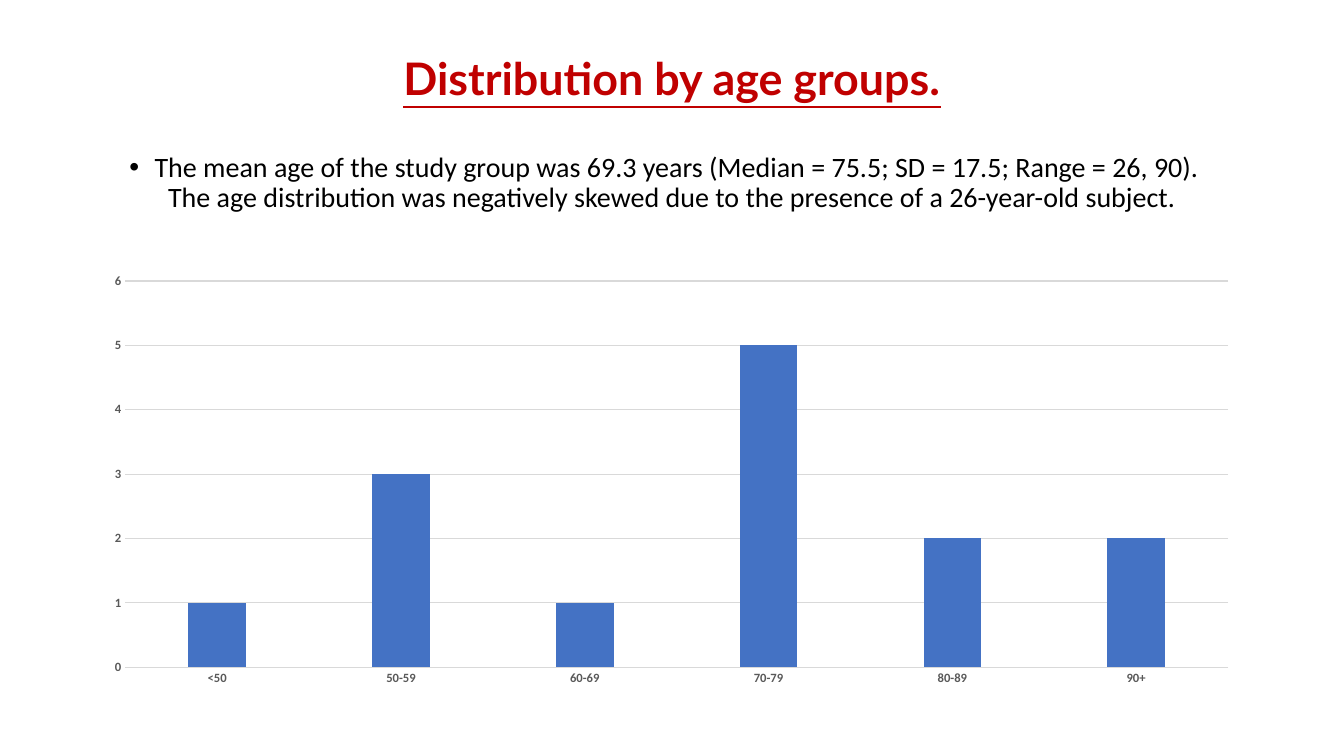
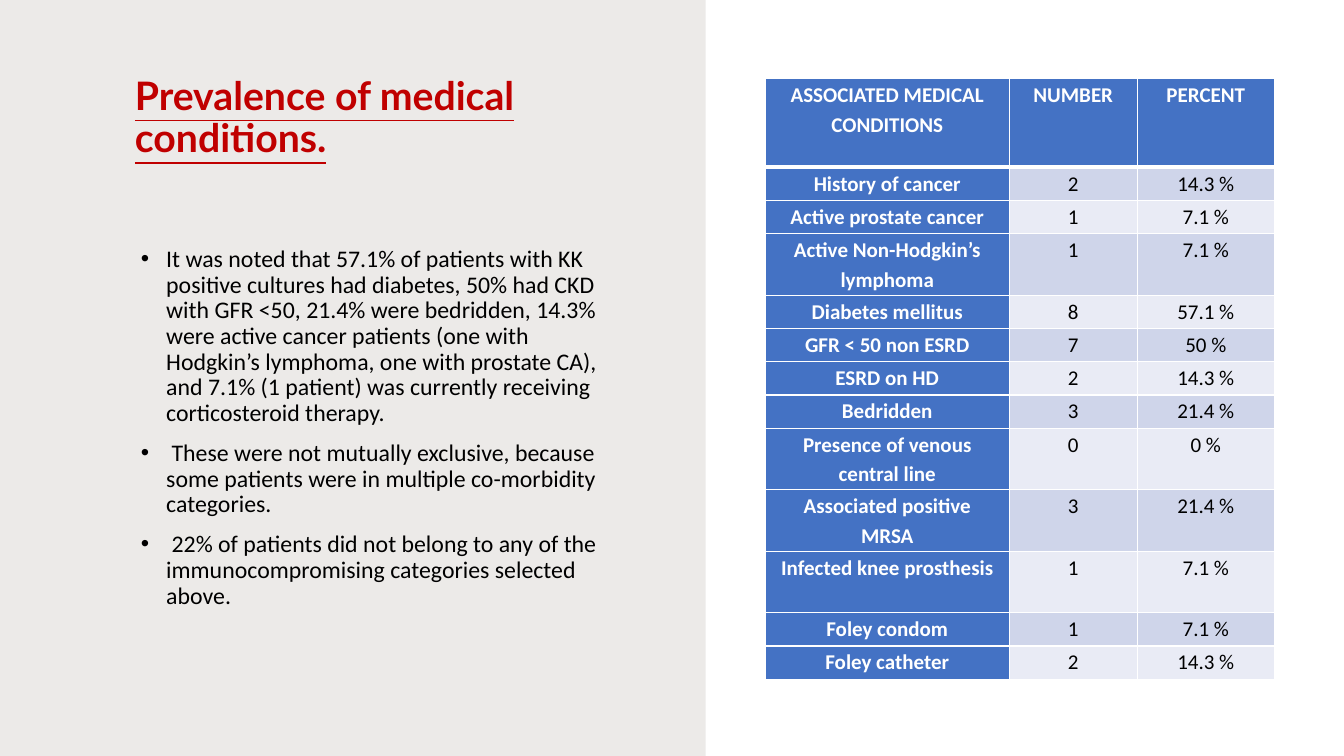
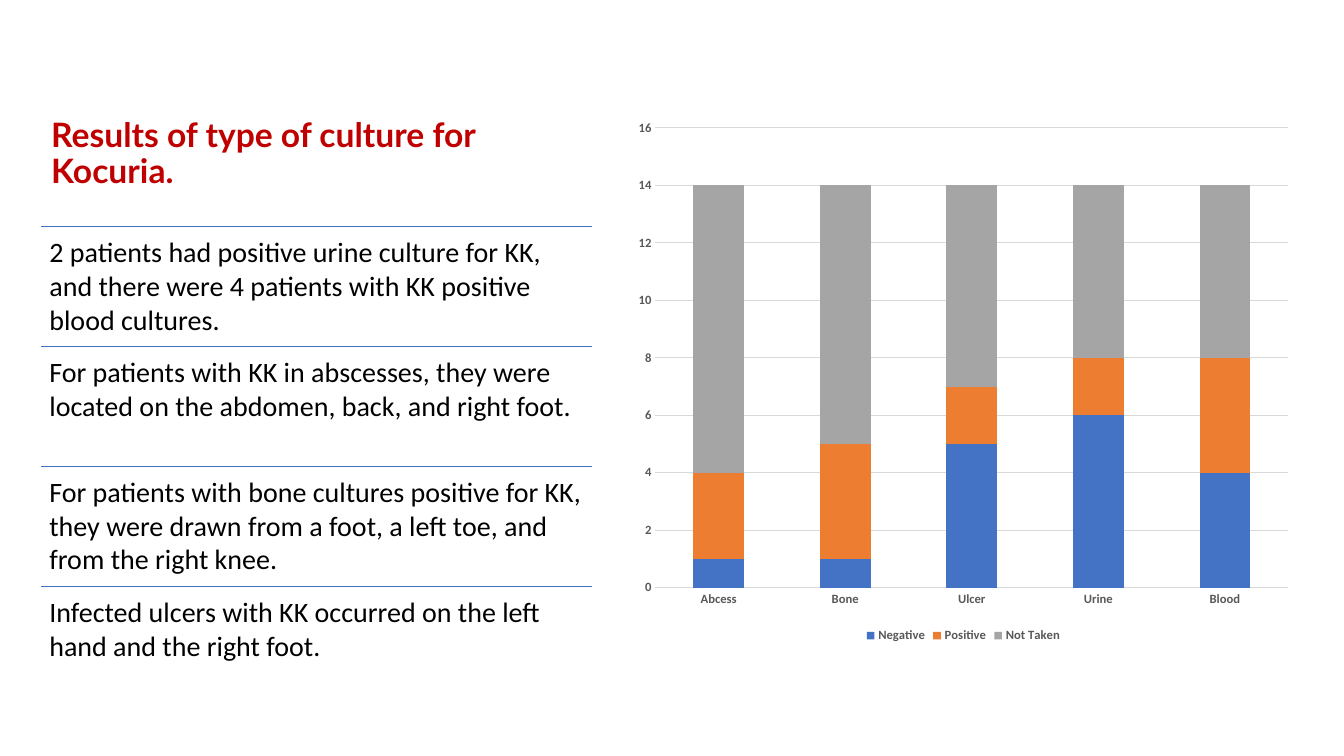
from lxml.etree import SubElement
from pptx import Presentation
from pptx.chart.data import CategoryChartData
from pptx.dml.color import RGBColor
from pptx.enum.chart import XL_CHART_TYPE as KIND, XL_LEGEND_POSITION, XL_TICK_MARK
from pptx.enum.shapes import MSO_CONNECTOR
from pptx.enum.text import MSO_ANCHOR, PP_ALIGN
from pptx.oxml.ns import qn
from pptx.util import Inches, Pt

# Shared look
HUES = {"title": "C00000", "ink": "000000", "white": "FFFFFF", "gray": "595959",
        "grid": "D9D9D9", "blue": "4472C4", "orange": "ED7D31", "silver": "A5A5A5",
        "odd": "CFD5EA", "even": "E9EBF5", "paper": "82766A"}
TITLE = {"name": "Lato", "bold": True}
BODY = {"name": "Calibri", "bold": False}
LABEL = {"name": "Calibri", "bold": True, "size": Pt(9)}
LEFT, MID = PP_ALIGN.LEFT, PP_ALIGN.CENTER

# Slide 1: age groups
AGE_TITLE = "Distribution by age groups."
AGE_NOTE = ("The mean age of the study group was 69.3 years (Median = 75.5; SD = 17.5; "
            "Range = 26, 90). The age distribution was negatively skewed due to the "
            "presence of a 26-year-old subject.")
AGES = ["<50", "50-59", "60-69", "70-79", "80-89", "90+"]
AGE_DATA = [("Series 1", (1, 3, 1, 5, 2, 2), "blue")]

# Slide 2: medical conditions
SICK_TITLE = "Prevalence of medical conditions."
SICK_NOTES = [
    "It was noted that 57.1% of patients with KK positive cultures had diabetes, 50% had "
    "CKD with GFR <50, 21.4% were bedridden, 14.3% were active cancer patients (one with "
    "Hodgkin’s lymphoma, one with prostate CA), and 7.1% (1 patient) was currently "
    "receiving corticosteroid therapy.",
    " These were not mutually exclusive, because some patients were in multiple "
    "co-morbidity categories.",
    " 22% of patients did not belong to any of the immunocompromising categories "
    "selected above.",
]
HEAD, LOW, TALL = 0.88, 0.33, 0.61
COLS = [2.42, 1.27, 1.36]
ROWS = [
    (HEAD, "ASSOCIATED MEDICAL CONDITIONS", "NUMBER", "PERCENT"),
    (LOW, "History of cancer", "2", "14.3 %"),
    (LOW, "Active prostate cancer", "1", "7.1 %"),
    (TALL, "Active Non-Hodgkin’s lymphoma", "1", "7.1 %"),
    (LOW, "Diabetes mellitus", "8", "57.1 %"),
    (LOW, "GFR < 50 non ESRD", "7", "50 %"),
    (LOW, "ESRD on HD", "2", "14.3 %"),
    (LOW, "Bedridden", "3", "21.4 %"),
    (TALL, "Presence of venous central line", "0", "0 %"),
    (TALL, "Associated positive MRSA", "3", "21.4 %"),
    (TALL, "Infected knee prosthesis", "1", "7.1 %"),
    (LOW, "Foley condom", "1", "7.1 %"),
    (LOW, "Foley catheter", "2", "14.3 %"),
]
# Torn right edge of the paper, top to bottom
TEAR = [
    (7.37, 0), (7.37, 0.03), (7.35, 0.34), (7.36, 0.49), (7.33, 0.7), (7.32, 0.74),
    (7.29, 0.92), (7.24, 1.05), (7.21, 1.22), (7.2, 1.27), (7.19, 1.33), (7.16, 1.42),
    (7.17, 1.47), (7.14, 1.56), (7.11, 1.68), (7.1, 1.86), (7.11, 1.98), (7.1, 2.21),
    (7.1, 2.34), (7.08, 2.41), (7.08, 2.54), (7.07, 2.68), (7.06, 2.75), (7.08, 2.82),
    (7.06, 2.9), (7.07, 2.92), (7.05, 2.98), (7.06, 3.02), (7.03, 3.34), (6.97, 3.65),
    (6.97, 3.78), (6.96, 3.86), (6.97, 3.92), (6.94, 4), (6.94, 4.07), (6.91, 4.1),
    (6.84, 4.29), (6.81, 4.36), (6.8, 4.53), (6.78, 4.73), (6.77, 4.87), (6.75, 4.98),
    (6.77, 5.07), (6.78, 5.13), (6.78, 5.29), (6.8, 5.44), (6.82, 5.55), (6.81, 5.76),
    (6.78, 5.9), (6.76, 6.06), (6.75, 6.33), (6.73, 6.4), (6.72, 6.44), (6.73, 6.58),
    (6.73, 6.64), (6.75, 6.73), (6.78, 6.8), (6.79, 6.88), (6.82, 7), (6.8, 7.09),
    (6.83, 7.21), (6.86, 7.4), (6.88, 7.5),
]

# Slide 3: cultures
GERM_TITLE = "Results of type of culture for Kocuria."
GERM_NOTES = [
    "2 patients had positive urine culture for KK, and there were 4 patients with KK "
    "positive blood cultures.",
    "For patients with KK in abscesses, they were located on the abdomen, back, and right "
    "foot.",
    "For patients with bone cultures positive for KK, they were drawn from a foot, a left "
    "toe, and from the right knee.",
    "Infected ulcers with KK occurred on the left hand and the right foot.",
]
SITES = ["Abcess", "Bone", "Ulcer", "Urine", "Blood"]
GERM_DATA = [("Negative", (1, 1, 5, 6, 4), "blue"),
             ("Positive", (3, 4, 2, 2, 4), "orange"),
             ("Not Taken", (10, 9, 7, 6, 6), "silver")]


def rgb(hue):
    return RGBColor.from_string(HUES[hue])


def put(item, vals):
    for key, val in vals.items():
        setattr(item, key, val)


def ink(font, style, hue, **more):
    put(font, {**style, **more})
    font.color.rgb = rgb(hue)


def paint(fill, hue):
    fill.solid()
    fill.fore_color.rgb = rgb(hue)


def add_text(slide, box, lines, style, hue, size, para=None, anchor=MSO_ANCHOR.TOP,
             pad=None, dot=None, under=None):
    frame = slide.shapes.add_textbox(*map(Inches, box)).text_frame
    put(frame, {"word_wrap": True, "vertical_anchor": anchor})
    if pad:
        put(frame, {f"margin_{side}": Inches(pad) for side in ("left", "top", "right", "bottom")})
    for i, line in enumerate(lines):
        p = frame.add_paragraph() if i else frame.paragraphs[0]
        put(p, para or {})
        run = p.add_run()
        run.text = line
        ink(run.font, style, hue, size=Pt(size), underline=under)
        if dot is not None:
            props = p._p.get_or_add_pPr()
            props.set("marL", str(Inches(dot)))
            props.set("indent", str(Inches(-0.25)))
            SubElement(props, qn("a:buFont")).set("typeface", "Arial")
            SubElement(props, qn("a:buChar")).set("char", "•")


def add_title(slide, box, text, size, align=LEFT, anchor=MSO_ANCHOR.TOP, under=True):
    add_text(slide, box, [text], TITLE, "title", size,
             {"line_spacing": 0.9, "alignment": align}, anchor, under=under)


def add_bars(slide, box, kind, cats, rows, gap, lap, top, step):
    data = CategoryChartData()
    data.categories = cats
    for name, vals, _ in rows:
        data.add_series(name, vals)
    chart = slide.shapes.add_chart(kind, *map(Inches, box), data).chart
    put(chart, {"has_title": False, "has_legend": len(rows) > 1})
    ink(chart.font, BODY, "ink", size=Pt(10))
    plot = chart.plots[0]
    put(plot, {"gap_width": gap, "overlap": lap, "vary_by_categories": False})
    for ser, (_, _, hue) in zip(plot.series, rows):
        paint(ser.format.fill, hue)
    # Axes and grid
    cat, val = chart.category_axis, chart.value_axis
    for axis in (cat, val):
        put(axis, {"major_tick_mark": XL_TICK_MARK.NONE, "minor_tick_mark": XL_TICK_MARK.NONE})
        ink(axis.tick_labels.font, LABEL, "gray")
    put(val, {"minimum_scale": 0, "maximum_scale": top, "major_unit": step,
              "has_major_gridlines": True})
    val.format.line.fill.background()
    for line in (cat.format.line, val.major_gridlines.format.line):
        line.color.rgb = rgb("grid")
        line.width = Pt(0.75)
    if chart.has_legend:
        put(chart.legend, {"position": XL_LEGEND_POSITION.BOTTOM, "include_in_layout": False})
        ink(chart.legend.font, LABEL, "gray")


def add_edge(cell, side, width):
    edge = SubElement(cell._tc.get_or_add_tcPr(), qn(f"a:{side}"), w=str(Pt(width)))
    tint = SubElement(edge, qn("a:solidFill"))
    SubElement(tint, qn("a:srgbClr"), val=HUES["white"])


def add_grid(slide, left, top):
    high = sum(row[0] for row in ROWS)
    table = slide.shapes.add_table(len(ROWS), len(COLS), *map(
        Inches, (left, top, sum(COLS), high))).table
    for col, wide in zip(table.columns, COLS):
        col.width = Inches(wide)
    for r, (tall, *texts) in enumerate(ROWS):
        table.rows[r].height = Inches(tall)
        for c, text in enumerate(texts):
            cell = table.cell(r, c)
            main = r == 0 or c == 0
            put(cell, {"margin_top": 0, "margin_bottom": 0})
            p = cell.text_frame.paragraphs[0]
            put(p, {"alignment": MID, "line_spacing": 1.15})
            run = p.add_run()
            run.text = text
            ink(run.font, BODY, "white" if main else "ink", bold=main, size=Pt(15))
            for side in ("lnL", "lnR", "lnT", "lnB"):
                thick = (r, side) in ((0, "lnB"), (1, "lnT"))
                add_edge(cell, side, 3 if thick else 1)
            paint(cell.fill, "blue" if main else "odd" if r % 2 else "even")


def add_paper(slide):
    pen = slide.shapes.build_freeform(0, 0, Inches(1))
    pen.add_line_segments(TEAR + [(0, 7.5)], close=True)
    paper = pen.convert_to_shape()
    paper.shadow.inherit = False
    paper.line.fill.background()
    paint(paper.fill, "paper")
    tint = paper.fill._xPr.find(f".//{qn('a:srgbClr')}")
    SubElement(tint, qn("a:alpha"), val="15000")


def add_rule(slide, left, top, wide):
    rule = slide.shapes.add_connector(MSO_CONNECTOR.STRAIGHT, *map(
        Inches, (left, top, left + wide, top)))
    rule.line.color.rgb = rgb("blue")
    rule.line.width = Pt(1)
    SubElement(rule._element.spPr, qn("a:effectLst"))


def main():
    deck = Presentation()
    put(deck, {"slide_width": Inches(13.33), "slide_height": Inches(7.5)})
    age, sick, germ = (deck.slides.add_slide(deck.slide_layouts[6]) for _ in range(3))

    # Age groups
    add_title(age, (1.1, 0.19, 11.13, 1.22), AGE_TITLE, 32, MID, MSO_ANCHOR.MIDDLE)
    add_text(age, (1.1, 1.47, 11.13, 0.84), [AGE_NOTE], BODY, "ink", 20,
             {"alignment": MID, "line_spacing": 0.9, "space_after": Pt(6)}, dot=0)
    add_bars(age, (0.91, 2.63, 11.5, 4.26), KIND.COLUMN_CLUSTERED, AGES, AGE_DATA,
             219, -27, 6, 1)

    # Medical conditions
    add_paper(sick)
    add_title(sick, (1.24, 0.71, 5.23, 1.42), SICK_TITLE, 28)
    add_text(sick, (1.24, 2.4, 4.85, 4.27), SICK_NOTES, BODY, "ink", 17,
             {"line_spacing": 0.9, "space_before": Pt(10)}, dot=0.31)
    add_grid(sick, 7.59, 0.78)

    # Cultures
    left, top, wide, step = 0.41, 2.25, 5.46, 1.19
    add_title(germ, (left, 0.5, wide, 1.44), GERM_TITLE, 24,
              anchor=MSO_ANCHOR.BOTTOM, under=False)
    add_bars(germ, (6.2, 1.09, 6.71, 5.33), KIND.COLUMN_STACKED, SITES, GERM_DATA,
             150, 100, 16, 2)
    for i, note in enumerate(GERM_NOTES):
        y = top + i * step
        add_rule(germ, left, y, wide)
        add_text(germ, (left, y, wide, step), [note], BODY, "ink", 20, pad=0.08)

    deck.save("out.pptx")


if __name__ == "__main__":
    main()
